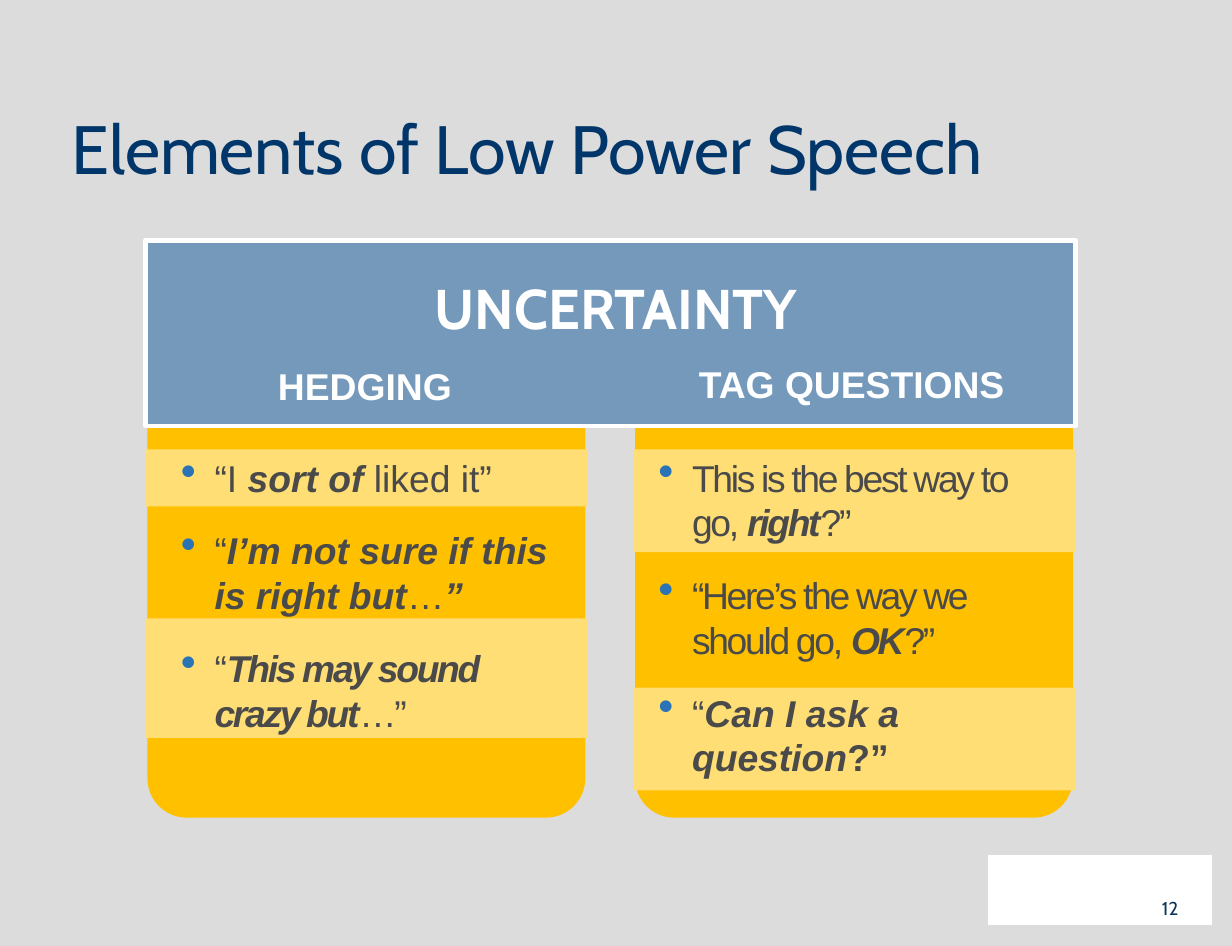
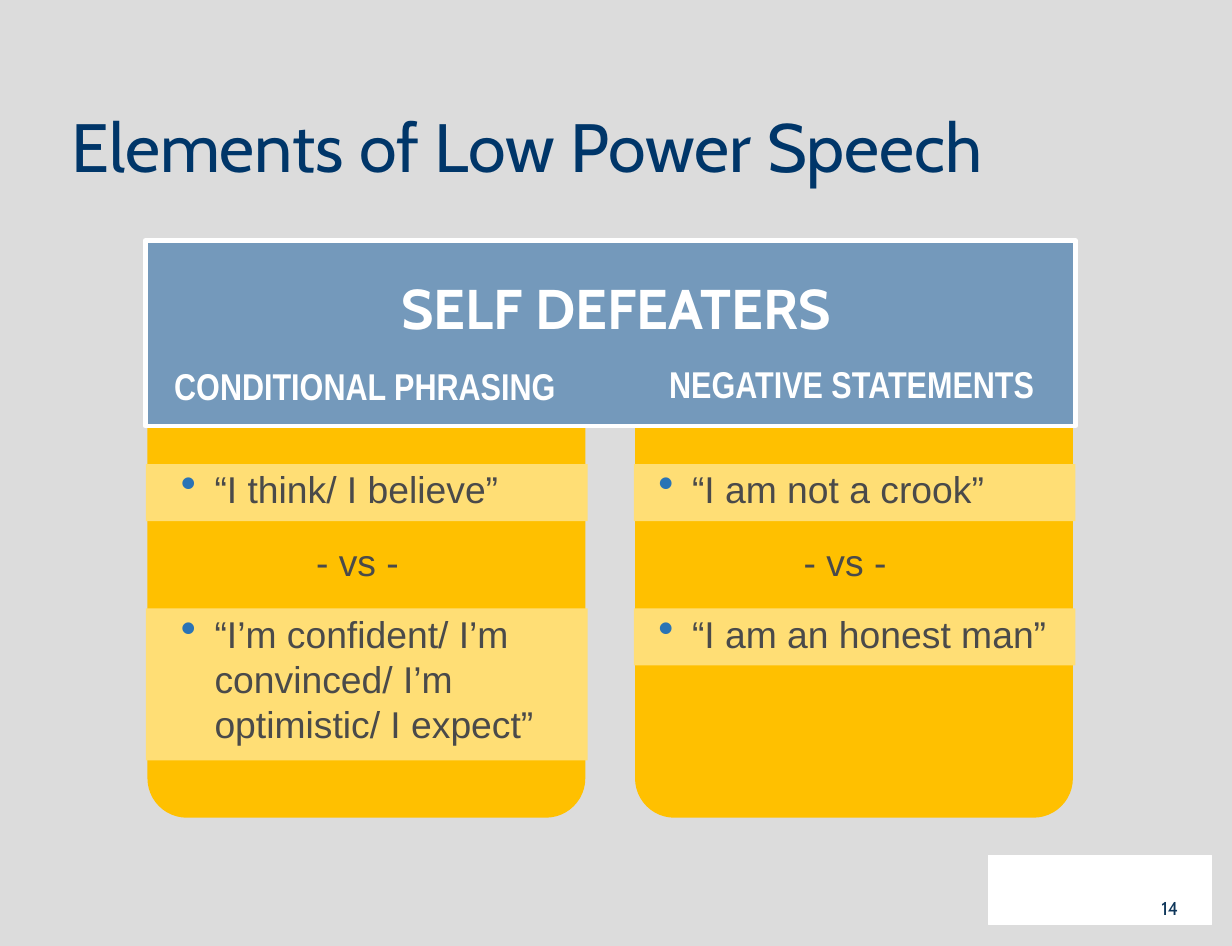
"""Build two slides on the elements of low power speech."""
from dataclasses import dataclass

import pptx
import pptx.dml.color
import pptx.enum.shapes
import pptx.enum.text
import pptx.oxml
import pptx.oxml.ns
import pptx.util

Pt = pptx.util.Pt
Align = pptx.enum.text.PP_ALIGN
Shapes = pptx.enum.shapes.MSO_SHAPE


@dataclass(frozen=True)
class Theme:
    """Colours, fonts and type sizes."""
    background: str = "DCDCDC"
    white: str = "FFFFFF"
    title: str = "003669"
    number: str = "0E365A"
    header: str = "7499BB"
    panel: str = "FFC000"
    band: str = "FFDE75"
    text: str = "4A4A4A"
    bullet: str = "2A73B5"
    display_font: str = "Cabin"
    body_font: str = "Arial"
    narrow_font: str = "Arial Narrow"
    title_size: int = 44
    topic_size: int = 36
    body_size: int = 24
    number_size: int = 12


THEME = Theme()
TITLE = "Elements of Low Power Speech"

COLUMNS = [
    {"panel": 95, "band": 94, "subhead": (103, 221.8), "text": (113, 244), "versus": 87},
    {"panel": 409, "band": 408.2, "subhead": (416.5, 220.3), "text": (420.5, 264), "versus": 93.5},
]
PANEL_WIDTH, BAND_WIDTH, SUBHEAD_WIDTH = 282, 284.4, 264

VERSUS = ("versus", [("- vs -", "")])
SLIDES = [
    {
        "number": "12", "topic": "UNCERTAINTY", "title_top": 68.4, "text_top": 289.4,
        "subhead_font": THEME.body_font,
        "columns": [
            {
                "subhead": "HEDGING",
                "bands": [(289.4, 36.7), (398.2, 77)],
                "items": [
                    ("bullet", [("“I ", ""), ("sort of ", "bi"), ("liked it”", "")]),
                    ("bullet", [("“", ""), ("I’m not sure if this is right but", "bi"),
                                ("…", ""), ("”", "bi")]),
                    ("tight", [("“", ""), ("This may sound crazy but", "bi"), ("…”", "")]),
                ],
            },
            {
                "subhead": "TAG QUESTIONS",
                "bands": [(289.4, 66.2), (442.8, 66.2)],
                "items": [
                    ("tight", [("This is the best way to go, ", ""), ("right", "bi"), ("?”", "")]),
                    ("tight", [("“Here’s the way we should go, ", ""), ("OK", "bi"), ("?”", "")]),
                    ("bullet", [("“", ""), ("Can I ask a question", "bi"), ("?”", "b")]),
                ],
            },
        ],
    },
    {
        "number": "14", "topic": "SELF DEFEATERS", "title_top": 67, "text_top": 296.6,
        "subhead_font": THEME.narrow_font,
        "columns": [
            {
                "subhead": "CONDITIONAL PHRASING",
                "bands": [(298.8, 36.7), (391.7, 97.9)],
                "items": [
                    ("bullet", [("“I think/ I believe”", "")]),
                    VERSUS,
                    ("bullet", [("“I’m confident/ I’m convinced/ I’m optimistic/ I expect”", "")]),
                ],
            },
            {
                "subhead": "NEGATIVE STATEMENTS",
                "bands": [(298.8, 36.7), (391.7, 36.7)],
                "items": [
                    ("bullet", [("“I am not a crook”", "")]),
                    VERSUS,
                    ("bullet", [("“I am an honest man”", "")]),
                ],
            },
        ],
    },
]


def colour(value):
    """Turn a hex string into a colour."""
    return pptx.dml.color.RGBColor.from_string(value)


def set_font(paragraph, name, size, value, bold=False):
    """Format all text of a paragraph."""
    font = paragraph.font
    font.name, font.size, font.bold = name, Pt(size), bold
    font.color.rgb = colour(value)


def place(shape, left, top, width, height):
    """Move and size a shape in points."""
    shape.left, shape.top = Pt(left), Pt(top)
    shape.width, shape.height = Pt(width), Pt(height)


def add_block(slide, kind, box, fill, line_width=0):
    """Add a filled shape, with a white outline if a width is given."""
    shape = slide.shapes.add_shape(kind, *map(Pt, box))
    shape.shadow.inherit = False
    shape.fill.solid()
    shape.fill.fore_color.rgb = colour(fill)
    if line_width:
        shape.line.color.rgb = colour(THEME.white)
        shape.line.width = Pt(line_width)
    else:
        shape.line.fill.background()
    return shape


def set_frame(frame, inset_x, inset_y, wrap=True):
    """Set insets, wrapping and top anchoring."""
    frame.margin_left = frame.margin_right = Pt(inset_x)
    frame.margin_top = frame.margin_bottom = Pt(inset_y)
    frame.word_wrap = wrap
    frame.auto_size = pptx.enum.text.MSO_AUTO_SIZE.NONE
    frame.vertical_anchor = pptx.enum.text.MSO_ANCHOR.TOP


def add_text(slide, box, inset_x=0, inset_y=0, wrap=True):
    """Add a text box and return its frame."""
    frame = slide.shapes.add_textbox(*map(Pt, box)).text_frame
    set_frame(frame, inset_x, inset_y, wrap)
    return frame


def add_line(frame, text, align, spacing=None):
    """Fill the first paragraph of a frame."""
    paragraph = frame.paragraphs[0]
    paragraph.text, paragraph.alignment = text, align
    if spacing:
        paragraph.line_spacing = spacing
    return paragraph


def set_indent(paragraph, margin, indent=0, bullet=False):
    """Set the margin and, if asked, a coloured bullet."""
    properties = paragraph._p.get_or_add_pPr()
    properties.set("marL", str(Pt(margin)))
    properties.set("indent", str(Pt(indent)))
    namespace = pptx.oxml.ns.nsdecls("a")
    if bullet:
        elements = [
            f'<a:buClr {namespace}><a:srgbClr val="{THEME.bullet}"/></a:buClr>',
            f'<a:buSzPct {namespace} val="120000"/>',
            f'<a:buChar {namespace} char="•"/>',
        ]
    else:
        elements = [f"<a:buNone {namespace}/>"]
    for element in elements:
        properties.append(pptx.oxml.parse_xml(element))


def add_items(frame, items, versus_margin):
    """Write the examples of one column."""
    for index, (kind, runs) in enumerate(items):
        paragraph = frame.add_paragraph() if index else frame.paragraphs[0]
        paragraph.space_before = Pt(12 if index else 0)
        paragraph.space_after = Pt(6)
        if kind == "versus":
            set_indent(paragraph, versus_margin)
        else:
            set_indent(paragraph, 21.6, -21.6, bullet=True)
        set_font(paragraph, THEME.body_font, THEME.body_size, THEME.text)
        for text, style in runs:
            run = paragraph.add_run()
            run.text = text
            run.font.bold, run.font.italic = "b" in style, "i" in style
            if kind == "tight":
                run._r.get_or_add_rPr().set("spc", "-150")


def add_column(slide, content, column, text_top, subhead_font):
    """Add the subhead, bands and examples of one column."""
    frame = add_text(slide, (*column["subhead"], SUBHEAD_WIDTH, 41), 7.2, 3.6, wrap=False)
    paragraph = add_line(frame, content["subhead"], Align.CENTER, 1.3)
    set_font(paragraph, subhead_font, THEME.body_size, THEME.white, bold=True)
    for top, height in content["bands"]:
        add_block(slide, Shapes.RECTANGLE, (column["band"], top, BAND_WIDTH, height), THEME.band)
    left, width = column["text"]
    frame = add_text(slide, (left, text_top, width, 218), 3.6, 3.6)
    add_items(frame, content["items"], column["versus"])


def add_slide(presentation, content):
    """Add one slide with its shared frame and two columns."""
    slide = presentation.slides.add_slide(presentation.slide_layouts[5])
    add_block(slide, Shapes.RECTANGLE, (636.5, 550.8, 144, 44.6), THEME.white, 0.75)
    for column in COLUMNS:
        panel = add_block(slide, Shapes.ROUNDED_RECTANGLE,
                          (column["panel"], 214.5, PANEL_WIDTH, 312), THEME.panel)
        panel.adjustments[0] = 0.09
    add_block(slide, Shapes.RECTANGLE, (93.6, 154.8, 599, 119.5), THEME.header, 3)

    title = slide.shapes.title
    place(title, 46, content["title_top"], 690, 47)
    set_frame(title.text_frame, 0, 0)
    paragraph = add_line(title.text_frame, TITLE, Align.LEFT)
    set_font(paragraph, THEME.display_font, THEME.title_size, THEME.title)

    paragraph = add_line(add_text(slide, (46.8, 172, 700, 44.6)), content["topic"], Align.CENTER, 1.1)
    set_font(paragraph, THEME.display_font, THEME.topic_size, THEME.white, bold=True)
    frame = add_text(slide, (687.6, 573, 79.2, 25), 7.9, 4.3)
    paragraph = add_line(frame, content["number"], Align.RIGHT)
    set_font(paragraph, THEME.display_font, THEME.number_size, THEME.number)

    for column_content, column in zip(content["columns"], COLUMNS):
        add_column(slide, column_content, column, content["text_top"], content["subhead_font"])


def main():
    """Build and save the presentation."""
    presentation = pptx.Presentation()
    presentation.slide_width, presentation.slide_height = Pt(793.44), Pt(609.12)
    background = presentation.slide_master.background.fill
    background.solid()
    background.fore_color.rgb = colour(THEME.background)
    for content in SLIDES:
        add_slide(presentation, content)
    presentation.save("out.pptx")


if __name__ == "__main__":
    main()
